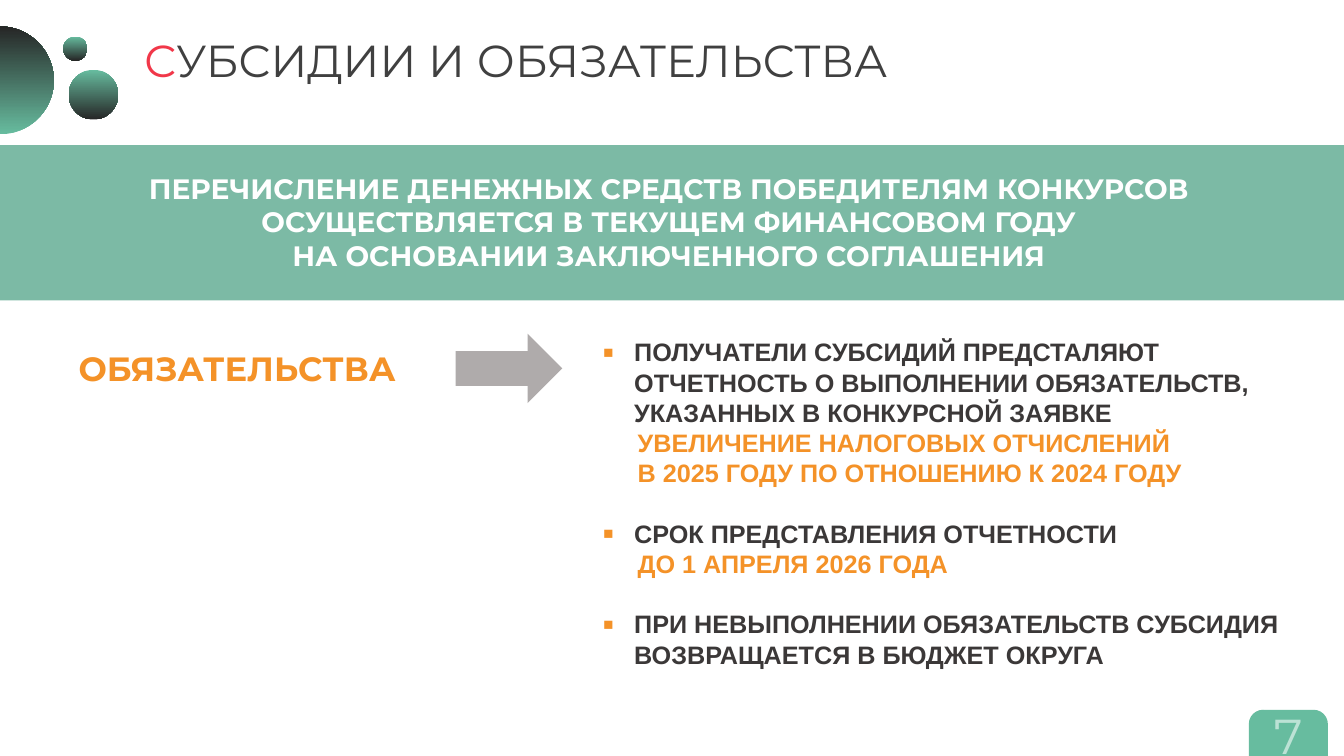
"""Build the slide on subsidies and obligations."""
from lxml import etree
from pptx import Presentation
from pptx import util as u
from pptx.dml.color import RGBColor
from pptx.enum import shapes, text
from pptx.oxml.ns import qn

GREEN = RGBColor(0x67, 0xBC, 0x9F)
BAND_GREEN = RGBColor(0x45, 0x9D, 0x80)
PALE_GREEN = RGBColor(0xBC, 0xE2, 0xD5)
BLACK = RGBColor(0x26, 0x26, 0x26)
RED = RGBColor(0xF1, 0x37, 0x49)
TITLE_GREY = RGBColor(0x40, 0x40, 0x40)
TEXT_GREY = RGBColor(0x3B, 0x38, 0x38)
ARROW_GREY = RGBColor(0xAF, 0xAB, 0xAB)
ORANGE = RGBColor(0xF4, 0x92, 0x28)
WHITE = RGBColor(0xFF, 0xFF, 0xFF)

SLIDE_W, SLIDE_H = 960, 540
HEADING = "Montserrat"
BODY = "Arial"
LINE = 21.6
DUTIES = [
    ("ПОЛУЧАТЕЛИ СУБСИДИЙ ПРЕДСТАЛЯЮТ ОТЧЕТНОСТЬ О ВЫПОЛНЕНИИ "
     "ОБЯЗАТЕЛЬСТВ, УКАЗАННЫХ В КОНКУРСНОЙ ЗАЯВКЕ",
     ["УВЕЛИЧЕНИЕ НАЛОГОВЫХ ОТЧИСЛЕНИЙ",
      "В 2025 ГОДУ ПО ОТНОШЕНИЮ К 2024 ГОДУ"]),
    ("СРОК ПРЕДСТАВЛЕНИЯ ОТЧЕТНОСТИ", ["ДО 1 АПРЕЛЯ 2026 ГОДА"]),
    ("ПРИ НЕВЫПОЛНЕНИИ ОБЯЗАТЕЛЬСТВ СУБСИДИЯ ВОЗВРАЩАЕТСЯ В БЮДЖЕТ ОКРУГА", []),
]


def apply(target, values):
    """Set each named attribute of the target."""
    for name, value in values.items():
        setattr(target, name, value)


def place(parent, preset, box, fill=None):
    """Add a preset shape without shadow or outline."""
    part = parent.add_shape(preset, *map(u.Pt, box))
    part.shadow.inherit = False
    part.line.fill.background()
    if fill is not None:
        part.fill.solid()
        part.fill.fore_color.rgb = fill
    return part


def text_frame(slide, box, **frame_format):
    """Add a wrapping text box and return its frame."""
    frame = slide.shapes.add_textbox(*map(u.Pt, box)).text_frame
    apply(frame, {"word_wrap": True, **frame_format})
    return frame


def write(paragraph, words, color, size, name=HEADING, bold=False):
    """Append one formatted run to a paragraph."""
    run = paragraph.add_run()
    run.text = words
    apply(run.font, {"name": name, "size": u.Pt(size), "bold": bold})
    run.font.color.rgb = color


def indent(paragraph, left, bullet=False):
    """Indent a paragraph and hang a square bullet if asked."""
    properties = paragraph._p.get_or_add_pPr()
    properties.set("marL", str(u.Pt(left)))
    properties.set("indent", str(u.Pt(-left if bullet else 0)))
    if bullet:
        tint = etree.SubElement(properties, qn("a:buClr"))
        etree.SubElement(tint, qn("a:srgbClr"), val=str(ORANGE))
        etree.SubElement(properties, qn("a:buSzPct"), val="130000")
        etree.SubElement(properties, qn("a:buFont"), typeface=BODY)
        etree.SubElement(properties, qn("a:buChar"), char="▪")


def draw_circles(slide, left, top):
    """Draw the cluster of gradient circles at the slide's corner."""
    cluster = slide.shapes.add_group_shape().shapes
    circle, pie = shapes.MSO_SHAPE.OVAL, shapes.MSO_SHAPE.PIE
    for preset, x, y, size in [(pie, -38.6, 0, 77), (circle, 49, 31, 35.5),
                               (circle, 45.2, 7.2, 17.3)]:
        disc = place(cluster, preset, (left + x, top + y, size, size))
        disc.fill.gradient()
        disc.fill.gradient_angle = 270
        for stop, color in zip(disc.fill.gradient_stops, (GREEN, BLACK)):
            stop.color.rgb = color
        for stop, position in zip(disc.fill.gradient_stops, (0, 1)):
            stop.position = position
        if preset == pie:
            disc.adjustments[0], disc.adjustments[1] = 54, 162
            disc.rotation = 180


def draw_title(slide, box):
    """Write the title with its red initial."""
    frame = text_frame(slide, box, margin_left=u.Pt(8.6), margin_right=u.Pt(8.6),
                       margin_top=u.Pt(4.3), margin_bottom=u.Pt(4.3))
    write(frame.paragraphs[0], "С", RED, 32)
    write(frame.paragraphs[0], "УБСИДИИ И ОБЯЗАТЕЛЬСТВА", TITLE_GREY, 32)


def draw_page_number(slide, box):
    """Draw the page number tab."""
    tab = place(slide.shapes, shapes.MSO_SHAPE.ROUND_2_SAME_RECTANGLE, box, GREEN)
    tab.adjustments[0] = 0.31
    apply(tab.text_frame, {"margin_left": 0, "margin_right": 0,
                           "vertical_anchor": text.MSO_ANCHOR.MIDDLE})
    number = tab.text_frame.paragraphs[0]
    number.alignment = text.PP_ALIGN.CENTER
    write(number, "7", PALE_GREEN, 35)


def draw_banner(slide, box):
    """Draw the translucent band and its centred statement."""
    left, top, width, height = box
    band = place(slide.shapes, shapes.MSO_SHAPE.RECTANGLE, box, BAND_GREEN)
    tint = band._element.spPr.find(qn("a:solidFill"))[0]
    etree.SubElement(tint, qn("a:alpha"), val="70000")
    frame = text_frame(slide, (left + 6.5, top + 15.1, width - 17.5, height - 31))
    statement = frame.paragraphs[0]
    basis = frame.add_paragraph()
    for paragraph, words in [
        (statement, "ПЕРЕЧИСЛЕНИЕ ДЕНЕЖНЫХ СРЕДСТВ ПОБЕДИТЕЛЯМ КОНКУРСОВ "
                    "ОСУЩЕСТВЛЯЕТСЯ В ТЕКУЩЕМ ФИНАНСОВОМ ГОДУ"),
        (basis, "НА ОСНОВАНИИ ЗАКЛЮЧЕННОГО СОГЛАШЕНИЯ"),
    ]:
        paragraph.alignment = text.PP_ALIGN.CENTER
        write(paragraph, words, WHITE, 20, bold=True)


def draw_heading(slide, box):
    """Write the section heading and the arrow that follows it."""
    left, top, width, height = box
    frame = text_frame(slide, box)
    write(frame.paragraphs[0], "ОБЯЗАТЕЛЬСТВА", ORANGE, 24, bold=True)
    place(slide.shapes, shapes.MSO_SHAPE.RIGHT_ARROW,
          (left + width + 14.4, top - 6.5, 76.3, 49.7), ARROW_GREY)


def draw_duties(slide, box):
    """List the duties with their highlighted details."""
    frame = text_frame(slide, box)
    for index, (duty, details) in enumerate(DUTIES):
        item = frame.add_paragraph() if index else frame.paragraphs[0]
        apply(item, {"line_spacing": u.Pt(LINE),
                     "space_before": u.Pt(LINE if index else 0)})
        indent(item, 22.5, bullet=True)
        write(item, duty, TEXT_GREY, 18, BODY, True)
        for detail in details:
            line = frame.add_paragraph()
            line.line_spacing = u.Pt(LINE)
            indent(line, 25)
            write(line, detail, ORANGE, 18, BODY, True)


def main():
    """Assemble and save the slide."""
    deck = Presentation()
    apply(deck, {"slide_width": u.Pt(SLIDE_W), "slide_height": u.Pt(SLIDE_H)})
    slide = deck.slides.add_slide(deck.slide_layouts[6])
    draw_title(slide, (94.3, 19.4, 854.6, 47.5))
    draw_circles(slide, 0, 18.9)
    draw_page_number(slide, (892, 507, 56.5, 33))
    draw_banner(slide, (0, 103.7, SLIDE_W, 110.9))
    draw_heading(slide, (49, 244.8, 262, 36))
    draw_duties(slide, (423.4, 236.9, 524.9, 264.2))
    deck.save("out.pptx")


if __name__ == "__main__":
    main()
